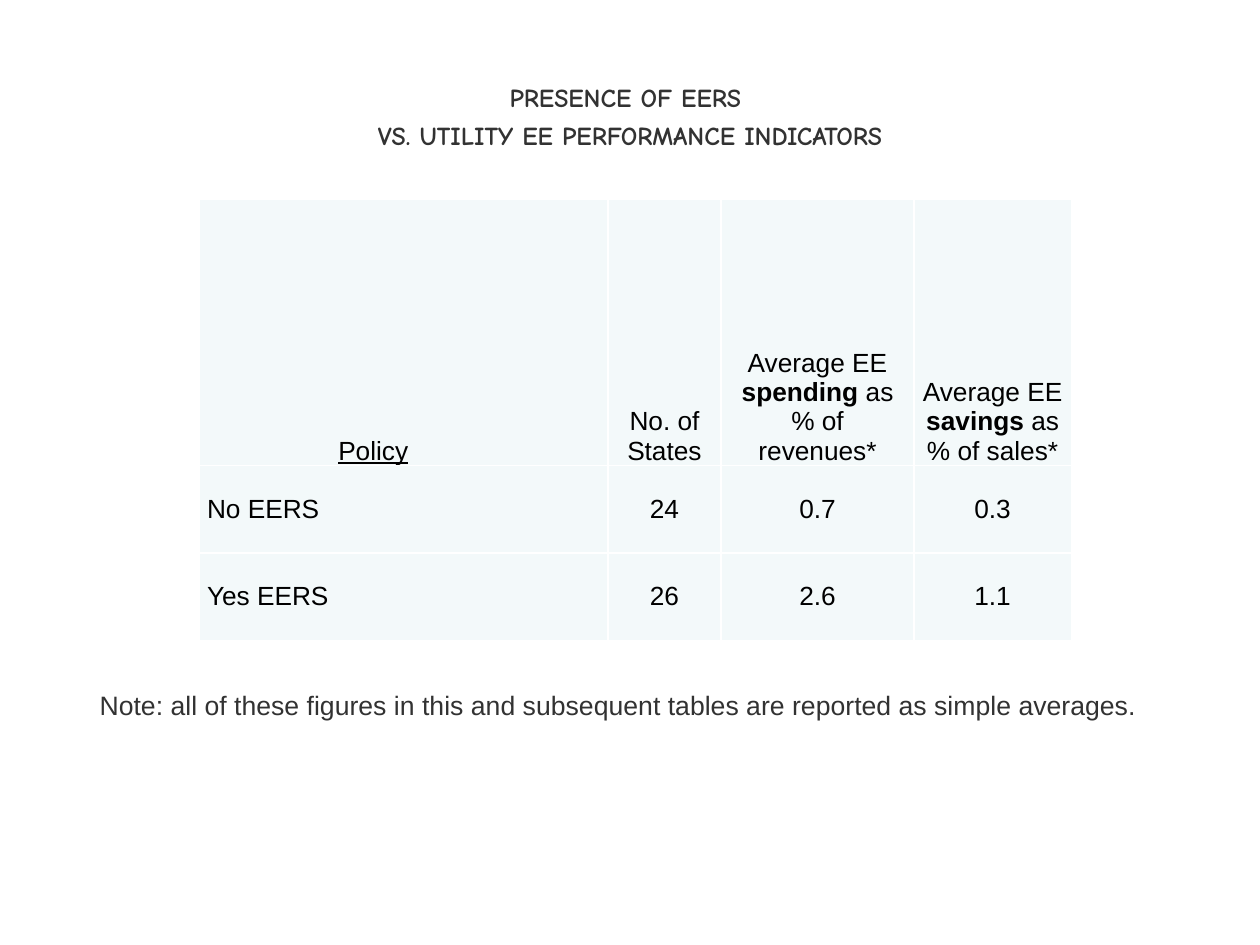
from pptx import Presentation
from pptx.dml.color import RGBColor as Rgb
from pptx.enum.text import MSO_ANCHOR as Anchor, MSO_AUTO_SIZE as Fit, PP_ALIGN as Align
from pptx.oxml.ns import qn
from pptx.util import Pt
from lxml.etree import SubElement as Sub

COLORS = {"ink": "323232", "text": "000000", "cell": "F3F9FA", "rule": "FFFFFF"}
HEAD = [
    [("Policy", {"line": True})],
    [("No. of States", {})],
    [("Average EE ", {}), ("spending ", {"bold": True}), ("as % of revenues*", {})],
    [("Average EE ", {}), ("savings", {"bold": True}), (" as % of sales*", {})],
]
ROWS = [("No EERS", "24", "0.7", "0.3"), ("Yes EERS", "26", "2.6", "1.1")]


def write(par, text, size=15, font="Arial", color="text", bold=False, line=False):
    run = par.add_run()
    run.text = text
    face = run.font
    face.size, face.name = Pt(size), font
    face.bold, face.underline = bold, line
    face.color.rgb = Rgb.from_string(COLORS[color])


class Page:
    def __init__(self, deck):
        self.slide = deck.slides.add_slide(deck.slide_layouts[1])

    def place(self, shape, left, top, width, height, inset):
        shape.left, shape.top = Pt(left), Pt(top)
        shape.width, shape.height = Pt(width), Pt(height)
        frame = shape.text_frame
        frame.word_wrap = True
        frame.auto_size = Fit.NONE
        frame.vertical_anchor = Anchor.TOP
        frame.margin_top, frame.margin_bottom = Pt(inset), Pt(0)
        return frame

    def title(self, lines, *box):
        frame = self.place(self.slide.shapes.title, *box, inset=5)
        for i, text in enumerate(lines):
            par = frame.add_paragraph() if i else frame.paragraphs[0]
            par.alignment = Align.CENTER
            par.space_before = Pt(4 if i else 0)
            write(par, text, size=14.8, font="Comic Neue", color="ink", bold=True)

    def note(self, text, *box):
        frame = self.place(self.slide.placeholders[1], *box, inset=3.6)
        par = frame.paragraphs[0]
        props = par._p.get_or_add_pPr()
        props.set("marL", "0")
        props.set("indent", "0")
        Sub(props, qn("a:buNone"))
        par.space_before = Pt(0)
        write(par, text, size=15.2, color="ink")

    def cell(self, cell, runs, align, anchor):
        props = cell._tc.get_or_add_tcPr()
        for side in "LRTB":
            edge = Sub(props, qn(f"a:ln{side}"), w=str(Pt(1)))
            fill = Sub(edge, qn("a:solidFill"))
            Sub(fill, qn("a:srgbClr"), val=COLORS["rule"])
        cell.fill.solid()
        cell.fill.fore_color.rgb = Rgb.from_string(COLORS["cell"])
        cell.vertical_anchor = anchor
        cell.margin_left = cell.margin_right = Pt(4.3)
        cell.margin_top = cell.margin_bottom = Pt(0)
        par = cell.text_frame.paragraphs[0]
        par.alignment = align
        par.space_before, par.space_after = Pt(0), Pt(0)
        for text, form in runs:
            write(par, text, **form)

    def table(self, left, top, widths, heights, rows):
        grid = self.slide.shapes.add_table(
            len(heights), len(widths), Pt(left), Pt(top),
            Pt(sum(widths)), Pt(sum(heights))).table
        grid.first_row = grid.horz_banding = False
        for col, width in zip(grid.columns, widths):
            col.width = Pt(width)
        for r, (height, row) in enumerate(zip(heights, rows)):
            grid.rows[r].height = Pt(height)
            for c, runs in enumerate(row):
                self.cell(grid.cell(r, c), runs,
                          Align.CENTER if c else Align.LEFT,
                          Anchor.MIDDLE if r else Anchor.BOTTOM)
        return grid


def main():
    deck = Presentation()
    deck.slide_width, deck.slide_height = Pt(720), Pt(540)
    page = Page(deck)
    page.title(["PRESENCE OF EERS ", "VS. UTILITY EE PERFORMANCE INDICATORS"],
               49.7, 41.8, 620.6, 72)
    page.note("Note: all of these figures in this and subsequent tables "
              "are reported as simple averages.", 49.7, 390.2, 620.6, 30.2)
    body = [[[(text, {})] for text in row] for row in ROWS]
    grid = page.table(114, 114, [233.3, 64.8, 110.1, 90], [152, 50, 50], [HEAD, *body])
    grid.cell(0, 0).margin_left = Pt(79.3)
    deck.save("out.pptx")


if __name__ == "__main__":
    main()
